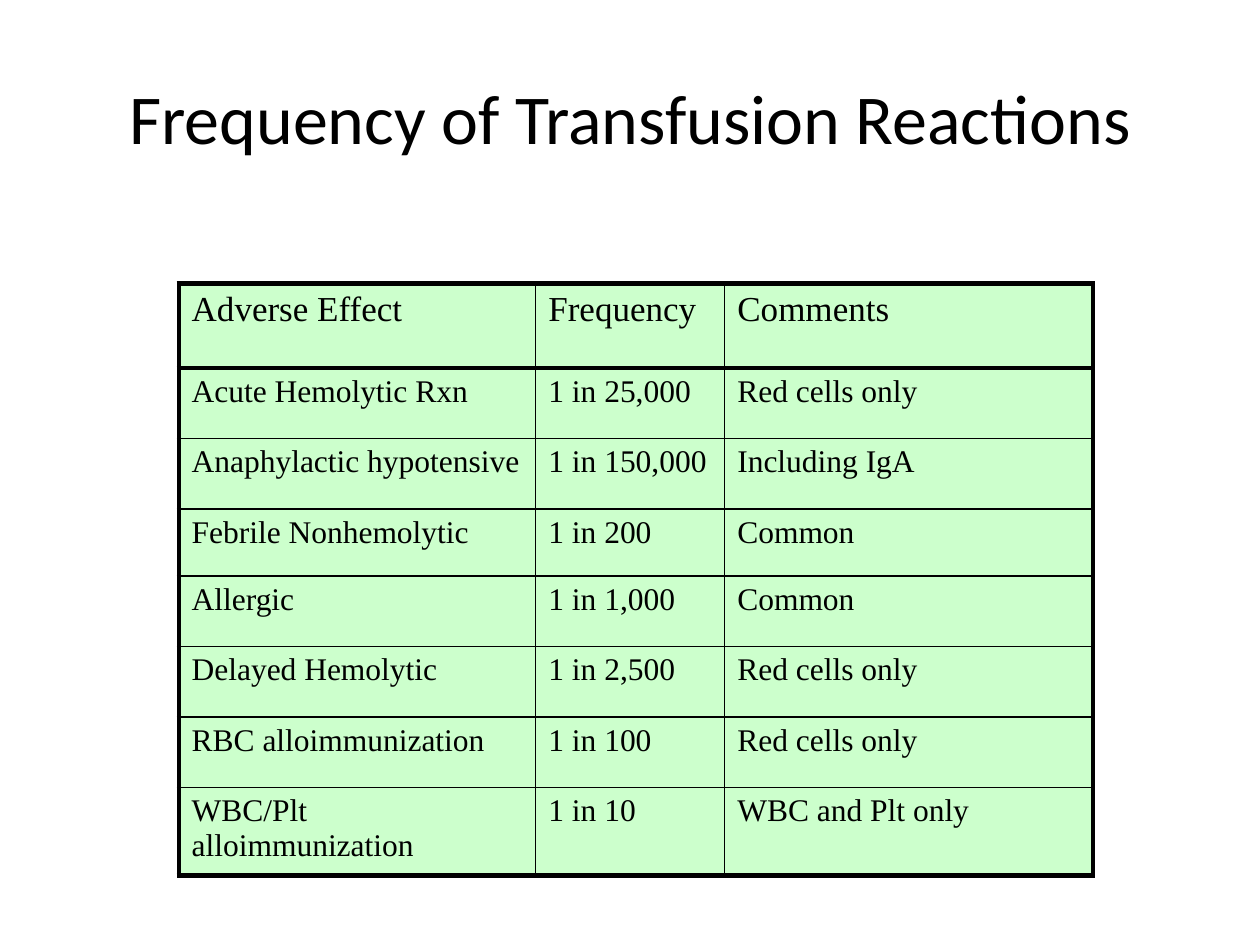
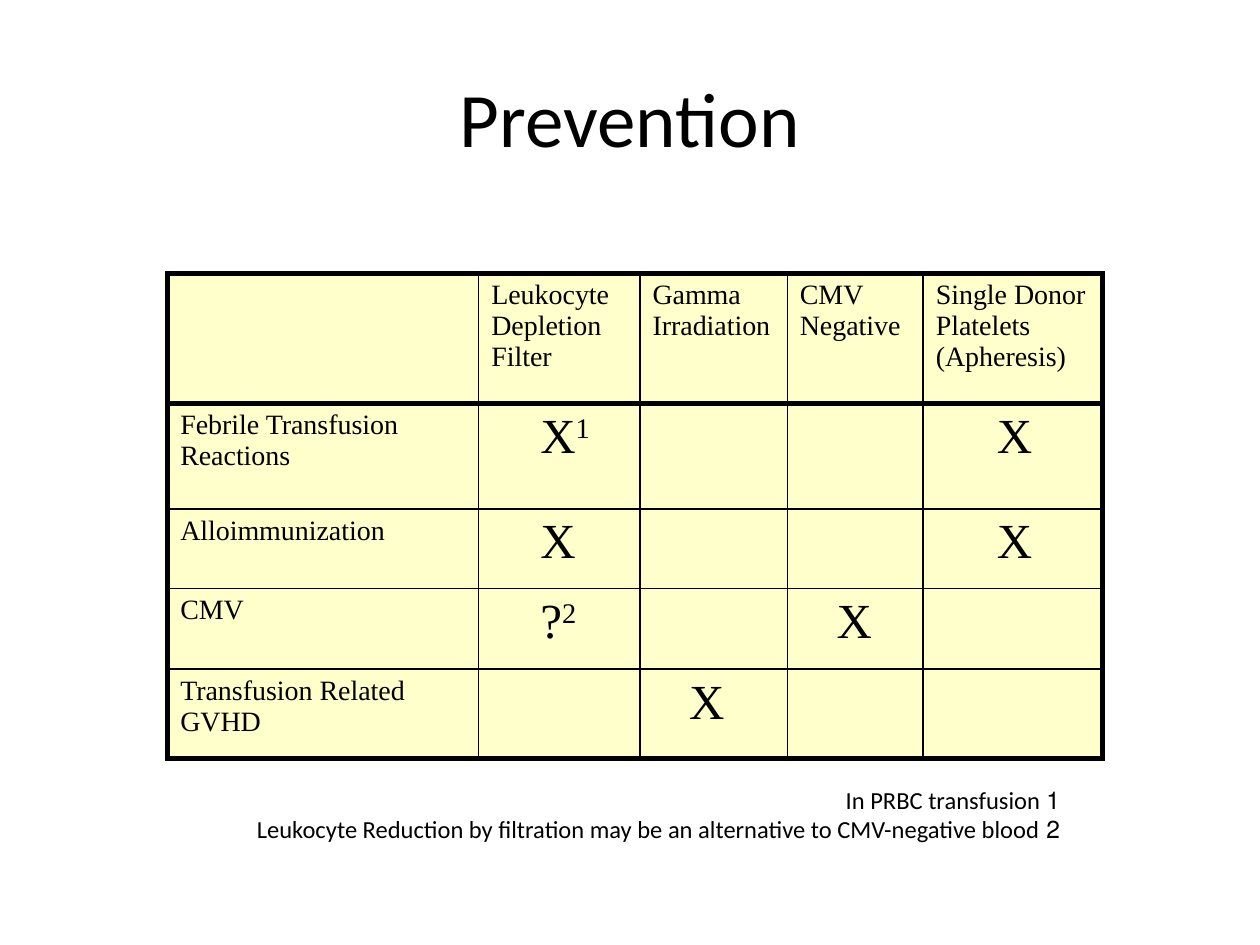
"""Build two slides on transfusion reactions and their prevention."""
import dataclasses

import lxml.etree
import pptx
import pptx.dml.color
import pptx.enum.text
import pptx.oxml.ns
import pptx.util

Cm = pptx.util.Cm
Pt = pptx.util.Pt
qn = pptx.oxml.ns.qn
Align = pptx.enum.text.PP_ALIGN

COLORS = {"ink": "000000", "green": "CCFFCC", "cream": "FFFFCC"}
SANS, SERIF = "Calibri", "Times New Roman"
THICK, THIN = 3, 1
MARK_SIZE = 28
MARKS = ("X", "?")


@dataclasses.dataclass
class Grid:
    left: float
    top: float
    cols: list[float]
    rows: list[float]
    fill: str
    head_size: int
    body_size: int
    cells: list[list[str]]
    indents: tuple[float, ...] = ()


@dataclasses.dataclass
class Page:
    title: str
    size: int
    grid: Grid
    notes: tuple[str, ...] = ()


RATES = Grid(
    3.61, 5.72, [7.19, 3.81, 7.42],
    [1.7, 1.42, 1.42, 1.35, 1.42, 1.42, 1.42, 1.65], "green", 20, 18,
    [
        ["Adverse Effect", "Frequency", "Comments"],
        ["Acute Hemolytic Rxn", "1 in 25,000", "Red cells only"],
        ["Anaphylactic hypotensive", "1 in 150,000", "Including IgA"],
        ["Febrile Nonhemolytic", "1 in 200", "Common"],
        ["Allergic", "1 in 1,000", "Common"],
        ["Delayed Hemolytic", "1 in 2,500", "Red cells only"],
        ["RBC alloimmunization", "1 in 100", "Red cells only"],
        ["WBC/Plt alloimmunization", "1 in 10", "WBC and Plt only"],
    ],
)
METHODS = Grid(
    3.38, 5.51, [6.27, 3.25, 2.97, 2.74, 3.61],
    [2.62, 2.13, 1.6, 1.63, 1.8], "cream", 16, 16,
    [
        ["", "Leukocyte Depletion Filter", "Gamma Irradiation",
         "CMV Negative", "Single Donor Platelets (Apheresis)"],
        ["Febrile Transfusion Reactions", "X^1", "", "", "X"],
        ["Alloimmunization", "X", "", "", "X"],
        ["CMV", "?^2", "", "X", ""],
        ["Transfusion Related GVHD", "", "X", "", ""],
    ],
    (0, 0.99, 0.74, 0.74, 1.23),
)
PAGES = [
    Page("Frequency of Transfusion Reactions", 40, RATES),
    Page("Prevention", 44, METHODS, (
        "1 In PRBC transfusion",
        "2 Leukocyte Reduction by filtration may be an alternative"
        " to CMV-negative blood",
    )),
]


def add_run(para, text: str, size: int, face: str, raised: bool = False) -> None:
    run = para.add_run()
    run.text = text
    run.font.size = Pt(size)
    run.font.name = face
    run.font.color.rgb = pptx.dml.color.RGBColor.from_string(COLORS["ink"])
    if raised:
        run.font._element.set("baseline", "30000")


def add_box(slide, left: float, top: float, width: float, height: float):
    box = slide.shapes.add_textbox(Cm(left), Cm(top), Cm(width), Cm(height))
    return box.text_frame


def add_title(slide, page: Page) -> None:
    frame = add_box(slide, 1.27, 0.76, 22.86, 3.18)
    frame.word_wrap = True
    frame.vertical_anchor = pptx.enum.text.MSO_ANCHOR.MIDDLE
    para = frame.paragraphs[0]
    para.alignment = Align.CENTER
    add_run(para, page.title, page.size, SANS)


def add_notes(slide, notes: tuple[str, ...]) -> None:
    frame = add_box(slide, 4.83, 15.7, 16.79, 1.45)
    frame.word_wrap = False
    frame.auto_size = pptx.enum.text.MSO_AUTO_SIZE.SHAPE_TO_FIT_TEXT
    for i, note in enumerate(notes):
        para = frame.add_paragraph() if i else frame.paragraphs[0]
        para.alignment = Align.RIGHT
        para._p.get_or_add_pPr().set("rtl", "1")
        add_run(para, note, 14, SANS)


def set_edges(cell, widths: dict[str, int]) -> None:
    props = cell._tc.get_or_add_tcPr()
    for i, (side, width) in enumerate(widths.items()):
        line = lxml.etree.Element(qn(f"a:ln{side}"), w=str(Pt(width)))
        fill = lxml.etree.SubElement(line, qn("a:solidFill"))
        lxml.etree.SubElement(fill, qn("a:srgbClr"), val=COLORS["ink"])
        props.insert(i, line)


def fill_cell(cell, text: str, size: int, indent: float) -> None:
    para = cell.text_frame.paragraphs[0]
    props = para._p.get_or_add_pPr()
    space = lxml.etree.SubElement(props, qn("a:spcBef"))
    lxml.etree.SubElement(space, qn("a:spcPct"), val="20000")
    if not text:
        return
    base, _, power = text.partition("^")
    if base in MARKS:
        size = MARK_SIZE
        props.set("marL", str(Cm(indent)))
        props.set("indent", "0")
    add_run(para, base, size, SERIF)
    if power:
        add_run(para, power, size, SERIF, True)


def add_grid(slide, grid: Grid) -> None:
    last_row, last_col = len(grid.rows) - 1, len(grid.cols) - 1
    table = slide.shapes.add_table(
        last_row + 1, last_col + 1, Cm(grid.left), Cm(grid.top),
        Cm(sum(grid.cols)), Cm(sum(grid.rows))).table
    table.first_row = table.horz_banding = False
    for col, width in zip(table.columns, grid.cols):
        col.width = Cm(width)
    for row, height in zip(table.rows, grid.rows):
        row.height = Cm(height)
    for r, texts in enumerate(grid.cells):
        for c, text in enumerate(texts):
            cell = table.cell(r, c)
            cell.fill.solid()
            cell.fill.fore_color.rgb = pptx.dml.color.RGBColor.from_string(
                COLORS[grid.fill])
            bold = {"L": c == 0, "R": c == last_col,
                    "T": r <= 1, "B": r in (0, last_row)}
            set_edges(cell, {s: THICK if b else THIN for s, b in bold.items()})
            size = grid.body_size if r else grid.head_size
            fill_cell(cell, text, size, grid.indents[c] if grid.indents else 0)


def main() -> None:
    deck = pptx.Presentation()
    deck.slide_width, deck.slide_height = Cm(25.4), Cm(19.05)
    for page in PAGES:
        slide = deck.slides.add_slide(deck.slide_layouts[6])
        add_title(slide, page)
        add_grid(slide, page.grid)
        if page.notes:
            add_notes(slide, page.notes)
    deck.save("out.pptx")


if __name__ == "__main__":
    main()
